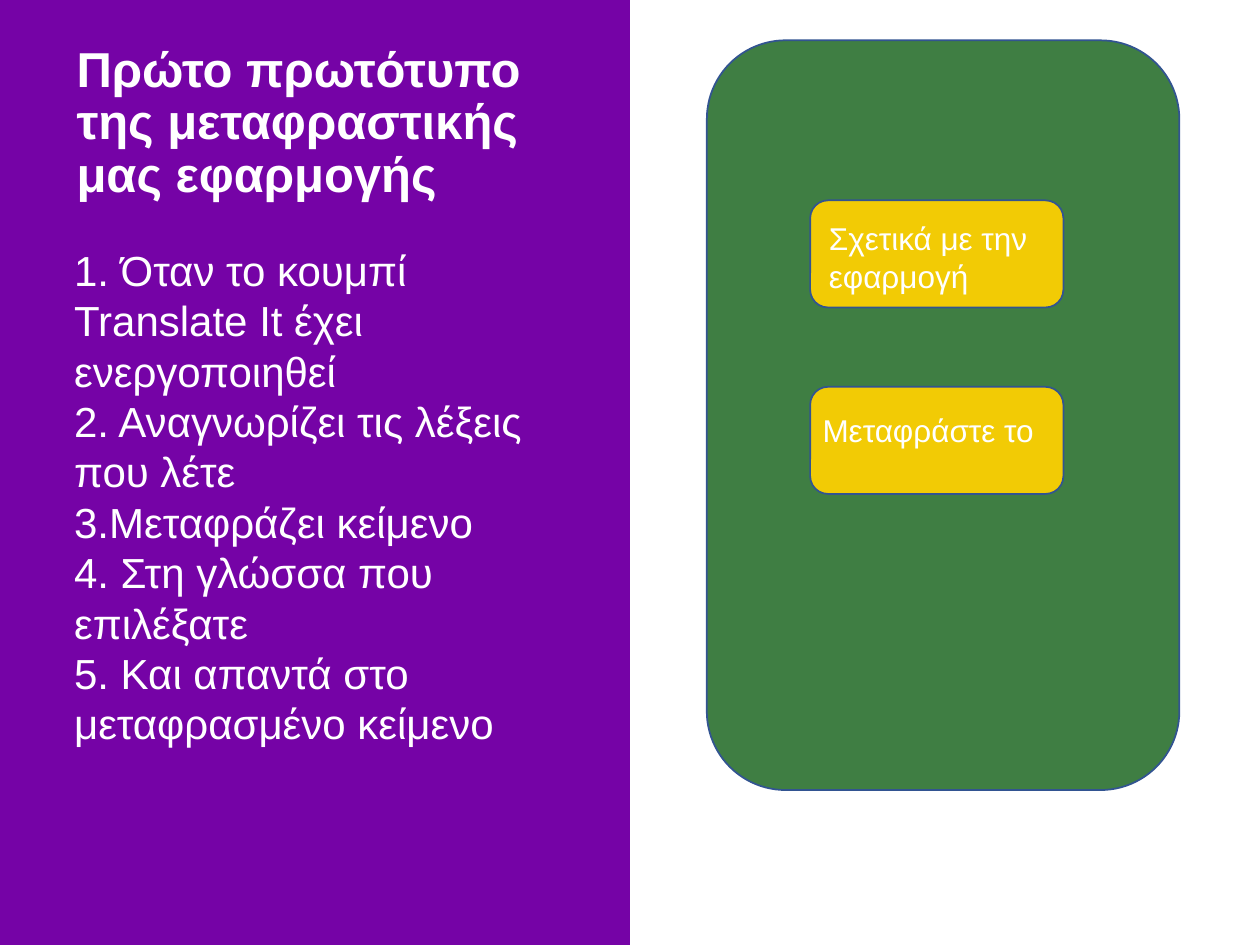
from pptx import Presentation
from pptx.dml.color import RGBColor
from pptx.enum.shapes import MSO_SHAPE
from pptx.enum.text import MSO_ANCHOR
from pptx.util import Inches, Pt

PURPLE = RGBColor(0x75, 0x03, 0xA6)
GREEN = RGBColor(0x3F, 0x7E, 0x43)
YELLOW = RGBColor(0xF2, 0xCB, 0x05)
NAVY = RGBColor(0x32, 0x54, 0x91)
WHITE = RGBColor(0xFF, 0xFF, 0xFF)
FONT = "Arial"

TITLE = "Πρώτο πρωτότυπο της μεταφραστικής μας εφαρμογής"
STEPS = [
    "1. Όταν το κουμπί Translate It έχει ενεργοποιηθεί",
    "2. Αναγνωρίζει τις λέξεις που λέτε",
    "3.Μεταφράζει κείμενο",
    "4. Στη γλώσσα που επιλέξατε",
    "5. Και απαντά στο μεταφρασμένο κείμενο",
]
BUTTONS = [
    ("Σχετικά με την εφαρμογή", 0.05, 0.10, 0.71),
    ("Μεταφράστε το", 0, 0.14, 0.40),
]

SLIDE_W, SLIDE_H = 10, 7.5
BUTTON_LEFT, BUTTON_TOP, BUTTON_W, BUTTON_H = 6.43, 1.59, 2.01, 0.85
BUTTON_PITCH = 1.48


def add_panel(slide, kind, box, fill, outline=None):
    panel = slide.shapes.add_shape(kind, *map(Inches, box))
    panel.shadow.inherit = False
    panel.fill.solid()
    panel.fill.fore_color.rgb = fill
    if outline is None:
        panel.line.fill.background()
    else:
        panel.line.color.rgb = outline
        panel.line.width = Pt(1)


def add_text(slide, box, lines, size, bold=False, anchor=MSO_ANCHOR.TOP, spacing=1.0):
    frame = slide.shapes.add_textbox(*map(Inches, box)).text_frame
    frame.word_wrap = True
    frame.vertical_anchor = anchor
    for index, line in enumerate(lines):
        paragraph = frame.add_paragraph() if index else frame.paragraphs[0]
        paragraph.line_spacing = spacing
        run = paragraph.add_run()
        run.text = line
        run.font.name = FONT
        run.font.size = Pt(size)
        run.font.bold = bold
        run.font.color.rgb = WHITE


def main():
    deck = Presentation()
    deck.slide_width, deck.slide_height = Inches(SLIDE_W), Inches(SLIDE_H)
    slide = deck.slides.add_slide(deck.slide_layouts[6])

    add_panel(slide, MSO_SHAPE.RECTANGLE, (0, 0, SLIDE_W / 2, SLIDE_H), PURPLE)
    add_text(slide, (0.51, 0.26, 4.33, 1.45), [TITLE], 28,
             bold=True, anchor=MSO_ANCHOR.MIDDLE, spacing=0.9)
    add_text(slide, (0.49, 1.89, 4.03, 4.14), STEPS, 24)

    add_panel(slide, MSO_SHAPE.ROUNDED_RECTANGLE, (5.61, 0.32, 3.75, 5.95), GREEN, NAVY)
    for row, (label, inset, drop, label_h) in enumerate(BUTTONS):
        top = BUTTON_TOP + row * BUTTON_PITCH
        add_panel(slide, MSO_SHAPE.ROUNDED_RECTANGLE,
                  (BUTTON_LEFT, top, BUTTON_W, BUTTON_H), YELLOW, NAVY)
        add_text(slide, (BUTTON_LEFT + inset, top + drop, BUTTON_W, label_h), [label], 18)

    deck.save("out.pptx")


if __name__ == "__main__":
    main()
